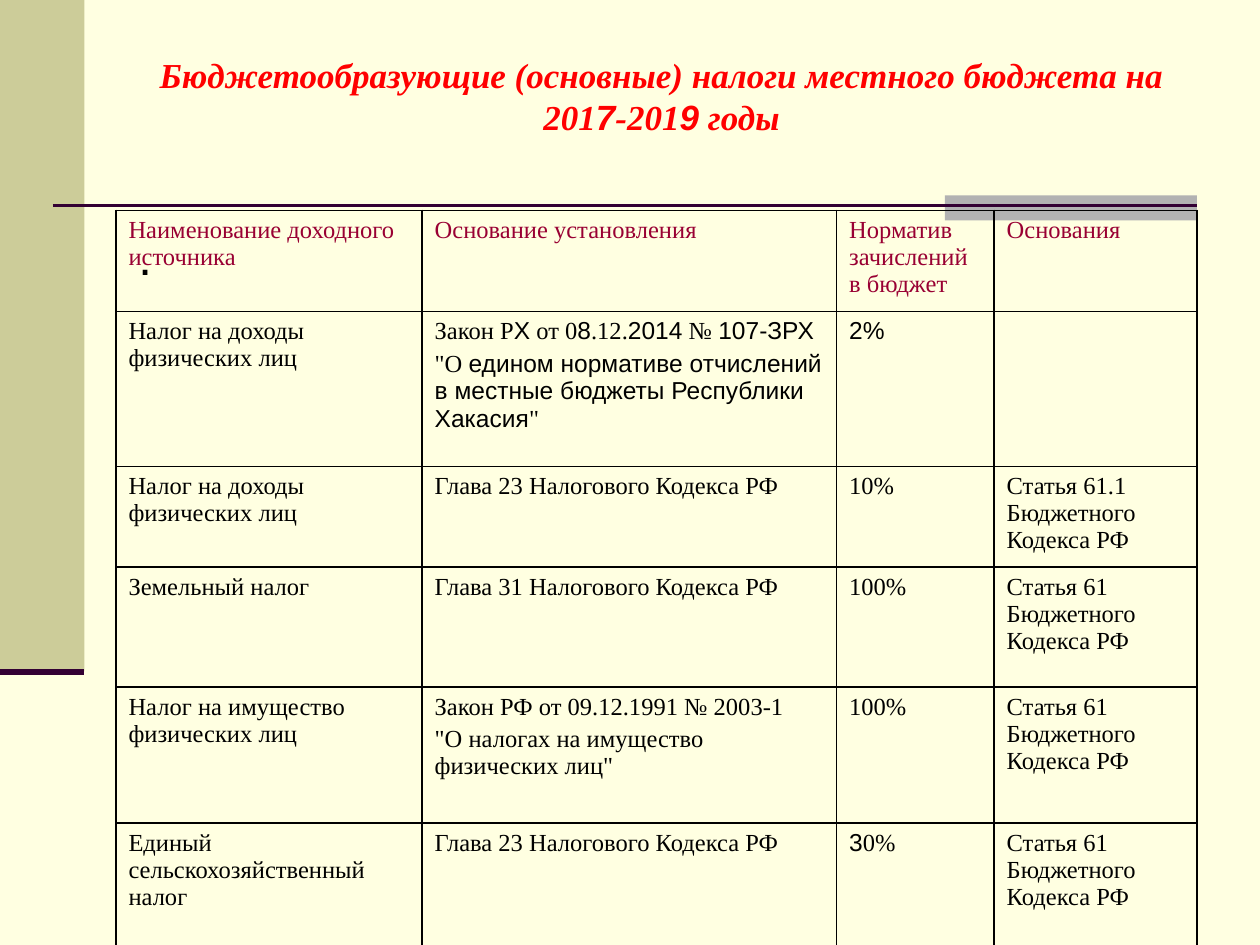
from lxml.etree import SubElement
from pptx import Presentation
from pptx.dml.color import RGBColor as RGB
from pptx.enum.shapes import MSO_CONNECTOR as CONN, MSO_SHAPE as SHAPE
from pptx.enum.text import MSO_ANCHOR as ANCHOR, PP_ALIGN as ALIGN
from pptx.oxml import parse_xml
from pptx.oxml.ns import nsdecls, qn
from pptx.util import Inches, Pt

TITLE = ["Бюджетообразующие (основные) налоги местного бюджета на 201|7|-201|9| годы"]
BODY = ["|."]
HEADER = ["Наименование доходного источника", "Основание установления",
          "Норматив зачислений в бюджет", "Основания"]
INCOME_TAX = "Налог на доходы физических лиц"
CHAPTER_23 = "Глава 23 Налогового Кодекса РФ"
ARTICLE_61 = "Статья 61 Бюджетного Кодекса РФ"
TAXES = [
    [INCOME_TAX,
     "Закон Р|Х| от 0|8|.12.|2014| № |107-ЗРХ\n"
     "\"О |едином нормативе отчислений в местные бюджеты Республики Хакасия|\"",
     "|2%", ""],
    [INCOME_TAX, CHAPTER_23, "10%", "Статья 61.1 Бюджетного Кодекса РФ"],
    ["Земельный налог", "Глава 31 Налогового Кодекса РФ", "100%", ARTICLE_61],
    ["Налог на имущество физических лиц",
     "Закон РФ от 09.12.1991 № 2003-1\n\"О налогах на имущество физических лиц\"",
     "100%", ARTICLE_61],
    ["Единый сельскохозяйственный налог", CHAPTER_23, "|3|0%", ARTICLE_61],
]
COLS = [2.43, 3.29, 1.25, 1.61]
ROWS = [0.75, 1.23, 0.75, 0.95, 1.08, 1.03]

THEME = {
    "fonts": ("Times New Roman", "Arial"),
    "bg": "FFFFE1", "side": "CCCC99", "accent": "B2B2B2", "rule": "330033",
    "border": "000000",
    "title": {"size": Pt(20), "bold": True, "italic": True, "color": "FF0000"},
    "body": {"size": Pt(28), "color": "000000"},
    "header": {"size": Pt(14), "color": "990033"},
    "cell": {"size": Pt(14), "color": "000000"},
}
BARS = [(0, 0, 0.67, 5.33, "side"), (7.5, 1.55, 2, 0.2, "accent")]
RULES = [(0.42, 1.63, 9.5, 1.5), (0, 5.33, 0.67, 3.5)]


def write(tf, lines, style, before=0.2, align=ALIGN.LEFT):
    for i, line in enumerate(lines):
        p = tf.add_paragraph() if i else tf.paragraphs[0]
        p.alignment = align
        p.space_before = Pt(style["size"].pt * before)
        for j, text in enumerate(line.split("|")):
            if not text:
                continue
            r = p.add_run()
            r.text = text
            r.font.name = THEME["fonts"][j % 2]
            for key, value in style.items():
                if key == "color":
                    r.font.color.rgb = RGB.from_string(value)
                else:
                    setattr(r.font, key, value)


def text_box(s, box, **formats):
    tf = s.shapes.add_textbox(*map(Inches, box)).text_frame
    for key, value in {"word_wrap": True, **formats}.items():
        setattr(tf, key, value)
    return tf


def border(cell):
    tcPr = cell._tc.get_or_add_tcPr()
    for i, side in enumerate("LRTB"):
        tcPr.insert(i, parse_xml(
            f'<a:ln{side} {nsdecls("a")} w="{Pt(1)}"><a:solidFill>'
            f'<a:srgbClr val="{THEME["border"]}"/></a:solidFill></a:ln{side}>'))


def add_decor(s):
    for *box, color in BARS:
        sp = s.shapes.add_shape(SHAPE.RECTANGLE, *map(Inches, box))
        sp.shadow.inherit = False
        sp.fill.solid()
        sp.fill.fore_color.rgb = RGB.from_string(THEME[color])
        sp.line.fill.background()
    for x1, y, x2, width in RULES:
        ln = s.shapes.add_connector(CONN.STRAIGHT, *map(Inches, (x1, y, x2, y)))
        ln.line.color.rgb = RGB.from_string(THEME["rule"])
        ln.line.width = Pt(width)
        SubElement(ln._element.spPr, qn("a:effectLst"))


def add_taxes(s):
    data = [HEADER] + TAXES
    box = (0.92, 1.67, sum(COLS), sum(ROWS))
    table = s.shapes.add_table(len(ROWS), len(COLS), *map(Inches, box)).table
    table.first_row = table.horz_banding = False
    for col, width in zip(table.columns, COLS):
        col.width = Inches(width)
    for i, (row, height) in enumerate(zip(table.rows, ROWS)):
        row.height = Inches(height)
        for cell, text in zip(row.cells, data[i]):
            cell.fill.background()
            border(cell)
            write(cell.text_frame, text.split("\n"), THEME["cell" if i else "header"])


def main():
    prs = Presentation()
    prs.slide_width, prs.slide_height = Inches(10), Inches(7.5)
    s = prs.slides.add_slide(prs.slide_layouts[6])
    s.background.fill.solid()
    s.background.fill.fore_color.rgb = RGB.from_string(THEME["bg"])
    add_decor(s)
    tf = text_box(s, (1, 0.3, 8.5, 1.25), vertical_anchor=ANCHOR.MIDDLE,
                  margin_bottom=Inches(0.38))
    write(tf, TITLE, THEME["title"], before=0, align=ALIGN.CENTER)
    write(text_box(s, (1, 1.75, 8.5, 4.95)), BODY, THEME["body"])
    add_taxes(s)
    prs.save("out.pptx")


if __name__ == "__main__":
    main()
